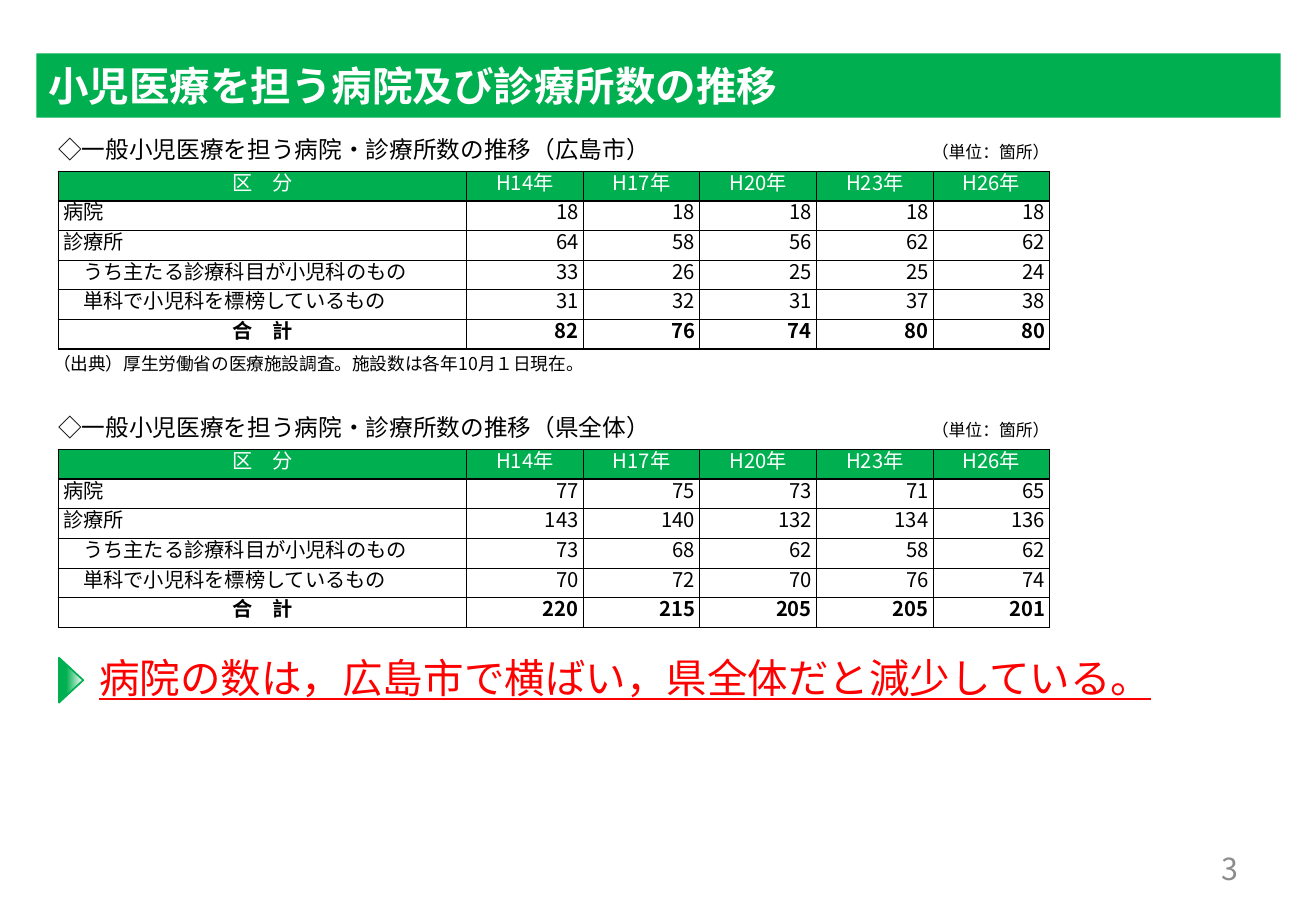
"""Build a slide on the number of hospitals and clinics providing paediatric care."""
from copy import deepcopy

from lxml.etree import SubElement
from pptx import Presentation
from pptx.dml.color import RGBColor
from pptx.enum.shapes import MSO_SHAPE
from pptx.enum.text import MSO_ANCHOR, PP_ALIGN
from pptx.oxml.ns import qn
from pptx.util import Pt

PX = 9144
FONT = "Noto Sans CJK JP"
GREEN, WHITE, BLACK, RED, GRAY = "00B050", "FFFFFF", "000000", "FF0000", "8C8C8C"
YEARS = ["H14年", "H17年", "H20年", "H23年", "H26年"]
LABELS = ["病院", "診療所", "　うち主たる診療科目が小児科のもの", "　単科で小児科を標榜しているもの", "合　計"]
COLUMN_WIDTHS = [336] + [96] * len(YEARS)
THICK_ROW_EDGES = {0, 1, 5, 6}
THICK_COLUMN_EDGES = {0, 6}
REGIONS = [
    ("広島市", 106, [
        [18, 18, 18, 18, 18],
        [64, 58, 56, 62, 62],
        [33, 26, 25, 25, 24],
        [31, 32, 31, 37, 38],
        [82, 76, 74, 80, 80],
    ]),
    ("県全体", 335, [
        [77, 75, 73, 71, 65],
        [143, 140, 132, 134, 136],
        [73, 68, 62, 58, 62],
        [70, 72, 70, 76, 74],
        [220, 215, 205, 205, 201],
    ]),
]


def set_font(font, size, color, bold=False):
    """Apply the slide font with a size, colour and weight."""
    font.size = Pt(size)
    font.bold = bold
    font.color.rgb = RGBColor.from_string(color)
    font.name = FONT
    SubElement(font._element, qn("a:ea"), typeface=FONT)


def add_text_box(left, top, width, height, text="", anchor=MSO_ANCHOR.TOP):
    """Add a wrapping text box and return its paragraph."""
    box = slide.shapes.add_textbox(left * PX, top * PX, width * PX, height * PX)
    box.text_frame.word_wrap = True
    box.text_frame.vertical_anchor = anchor
    paragraph = box.text_frame.paragraphs[0]
    paragraph.text = text
    return paragraph


presentation = Presentation()
presentation.slide_width = 1083 * PX
presentation.slide_height = 750 * PX
slide = presentation.slides.add_slide(presentation.slide_layouts[6])

title = slide.shapes.add_shape(MSO_SHAPE.RECTANGLE, 30 * PX, 44 * PX, 1024 * PX, 53 * PX)
title.shadow.inherit = False
title.fill.solid()
title.fill.fore_color.rgb = RGBColor.from_string(GREEN)
title.line.fill.background()
title.text_frame.vertical_anchor = MSO_ANCHOR.MIDDLE
paragraph = title.text_frame.paragraphs[0]
paragraph.text = "小児医療を担う病院及び診療所数の推移"
paragraph.alignment = PP_ALIGN.LEFT
set_font(paragraph.font, 24, WHITE, bold=True)

paragraph = add_text_box(776, 695, 253, 40, "3", MSO_ANCHOR.MIDDLE)
paragraph.alignment = PP_ALIGN.RIGHT
set_font(paragraph.font, 18, GRAY)

paragraph = add_text_box(72, 532, 979, 51, "病院の数は，広島市で横ばい，県全体だと減少している。", MSO_ANCHOR.MIDDLE)
set_font(paragraph.font, 24, RED)
paragraph.font.underline = True

marker = slide.shapes.add_shape(MSO_SHAPE.ISOSCELES_TRIANGLE, 40 * PX, 550 * PX, 37 * PX, 20 * PX)
marker.rotation = 90
marker.shadow.inherit = False
marker.line.color.rgb = RGBColor.from_string(GREEN)
marker.line.width = Pt(1)
marker.fill.gradient()
marker.fill.gradient_angle = 90
first_stop = marker.fill.gradient_stops[0]._gs
first_stop.addnext(deepcopy(first_stop))
for stop, (position, color) in zip(marker.fill.gradient_stops, [(0, GREEN), (0.3, GREEN), (1, WHITE)]):
    stop.position = position
    stop.color.rgb = RGBColor.from_string(color)

for region, top, counts in REGIONS:
    paragraph = add_text_box(38, top, 1014, 39)
    tab_list = SubElement(paragraph._p.get_or_add_pPr(), qn("a:tabLst"))
    SubElement(tab_list, qn("a:tab"), pos=str(719 * PX), algn="l")
    for text, size in [(f"◇一般小児医療を担う病院・診療所数の推移（{region}）\t", 14), ("（単位：箇所）", 10)]:
        run = paragraph.add_run()
        run.text = text
        set_font(run.font, size, BLACK)

    rows = [["区　分"] + YEARS] + [[label] + values for label, values in zip(LABELS, counts)]
    table = slide.shapes.add_table(
        len(rows), len(COLUMN_WIDTHS), 48 * PX, (top + 35) * PX, sum(COLUMN_WIDTHS) * PX, 24 * len(rows) * PX
    ).table
    table.first_row = False
    table.horz_banding = False
    for column, width in zip(table.columns, COLUMN_WIDTHS):
        column.width = width * PX

    for row_index, values in enumerate(rows):
        is_header = row_index == 0
        is_total = row_index == len(rows) - 1
        for column_index, value in enumerate(values):
            cell = table.cell(row_index, column_index)
            cell.margin_left = cell.margin_right = cell.margin_top = cell.margin_bottom = Pt(2.8)
            cell.vertical_anchor = MSO_ANCHOR.MIDDLE
            paragraph = cell.text_frame.paragraphs[0]
            paragraph.text = str(value)
            paragraph.line_spacing = Pt(12)
            if is_header or (is_total and column_index == 0):
                paragraph.alignment = PP_ALIGN.CENTER
            else:
                paragraph.alignment = PP_ALIGN.RIGHT if column_index else PP_ALIGN.LEFT
            set_font(paragraph.font, 12, WHITE if is_header else BLACK, bold=is_total)

            properties = cell._tc.get_or_add_tcPr()
            for side, is_thick in [
                ("L", column_index in THICK_COLUMN_EDGES),
                ("R", column_index + 1 in THICK_COLUMN_EDGES),
                ("T", row_index in THICK_ROW_EDGES),
                ("B", row_index + 1 in THICK_ROW_EDGES),
            ]:
                border = SubElement(properties, qn(f"a:ln{side}"), w=str(Pt(1 if is_thick else 0.5)))
                SubElement(SubElement(border, qn("a:solidFill")), qn("a:srgbClr"), val=BLACK)
            if is_header:
                cell.fill.solid()
                cell.fill.fore_color.rgb = RGBColor.from_string(GREEN)
            else:
                cell.fill.background()

    for row in table.rows:
        row.height = 24 * PX

paragraph = add_text_box(34, 286, 724, 54, "（出典）厚生労働省の医療施設調査。施設数は各年10月１日現在。")
set_font(paragraph.font, 10.5, BLACK)

presentation.save("out.pptx")
